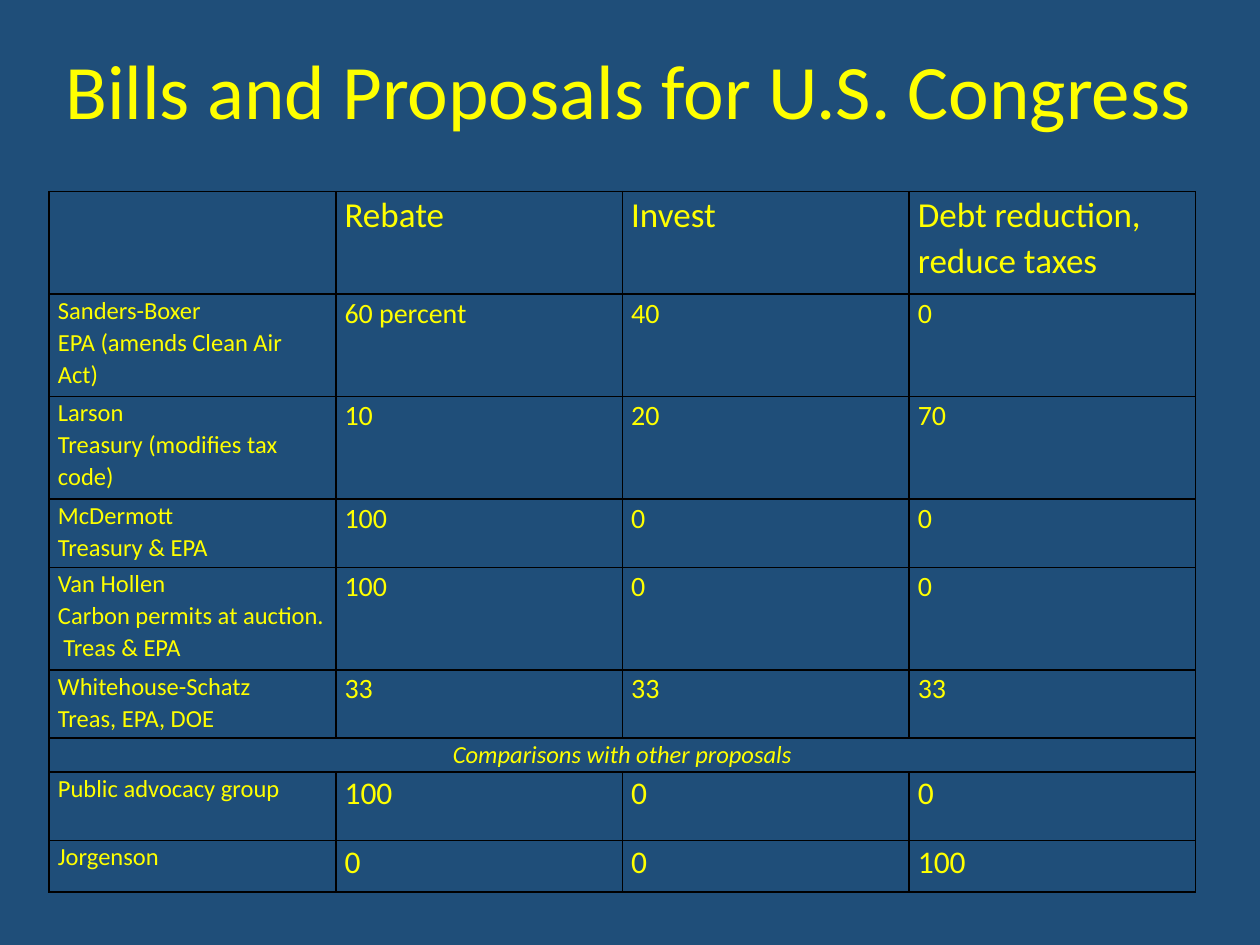
from lxml import etree
from pptx import Presentation
from pptx.dml.color import RGBColor
from pptx.enum.text import MSO_ANCHOR, PP_ALIGN
from pptx.oxml.ns import qn
from pptx.util import Inches, Pt

CENTER, LEFT = PP_ALIGN.CENTER, PP_ALIGN.LEFT
MIDDLE, TOP = MSO_ANCHOR.MIDDLE, MSO_ANCHOR.TOP

# Content: each row is (height in text lines, value size, cells)
TITLE = "Bills and Proposals for U.S. Congress"
COMPARISON = "Comparisons with other proposals"
ROWS = [
    (3, 20, ["", "Rebate", "Invest", "Debt reduction,\nreduce taxes"]),
    (3, 16, ["Sanders-Boxer\nEPA (amends Clean Air Act)", "60 percent", "40", "0"]),
    (3, 16, ["Larson\nTreasury (modifies tax code)", "10", "20", "70"]),
    (2, 16, ["McDermott\nTreasury & EPA", "100", "0", "0"]),
    (3, 16, ["Van Hollen\nCarbon permits at auction.  Treas & EPA", "100", "0", "0"]),
    (2, 16, ["Whitehouse-Schatz\nTreas, EPA, DOE", "33", "33", "33"]),
    (1, 14, [COMPARISON]),
    (2, 18, ["Public advocacy group", "100", "0", "0"]),
    (1.5, 18, ["Jorgenson", "0", "0", "100"]),
]

# Format
COLORS = {"background": "1F4E79", "text": "FFFF00", "border": "000000"}
FONT = "Calibri"
LABEL_SIZE, TITLE_SIZE = 14, 44
WIDTH, HEIGHT = Inches(10), Inches(7.5)
TABLE_LEFT, TABLE_TOP = Inches(0.39), Inches(1.52)
TABLE_WIDTH, TABLE_HEIGHT = Inches(9.1), Inches(5.56)
CELL_FORMAT = {"margin_left": Inches(0.07), "margin_right": Inches(0.07),
               "margin_top": 0, "margin_bottom": 0, "vertical_anchor": TOP}


def set_attributes(target, values):
    for name, value in values.items():
        setattr(target, name, value)


def write(frame, text, size, align, spacing, italic=False):
    frame.text = text
    for paragraph in frame.paragraphs:
        set_attributes(paragraph, {"alignment": align, "line_spacing": spacing})
        for run in paragraph.runs:
            set_attributes(run.font, {"name": FONT, "size": Pt(size),
                                      "bold": False, "italic": italic})
            run.font.color.rgb = RGBColor.from_string(COLORS["text"])


def add_borders(cell):
    properties = cell._tc.get_or_add_tcPr()
    for position, side in enumerate(("a:lnL", "a:lnR", "a:lnT", "a:lnB")):
        line = etree.Element(qn(side), w=str(Pt(1)))
        fill = etree.SubElement(line, qn("a:solidFill"))
        etree.SubElement(fill, qn("a:srgbClr"), val=COLORS["border"])
        properties.insert(position, line)


def main():
    prs = Presentation()
    prs.slide_width, prs.slide_height = WIDTH, HEIGHT
    slide = prs.slides.add_slide(prs.slide_layouts[5])
    background = slide.background.fill
    background.solid()
    background.fore_color.rgb = RGBColor.from_string(COLORS["background"])

    # Title
    title = slide.shapes.title
    set_attributes(title, {"left": Inches(-0.01), "top": Inches(0.21),
                           "width": WIDTH, "height": Inches(1.08)})
    title.text_frame.vertical_anchor = MIDDLE
    write(title.text_frame, TITLE, TITLE_SIZE, CENTER, 0.9)

    # Table grid: equal columns, row heights in shares of the text lines
    column_count = len(ROWS[0][2])
    table = slide.shapes.add_table(len(ROWS), column_count, TABLE_LEFT, TABLE_TOP,
                                   TABLE_WIDTH, TABLE_HEIGHT).table
    set_attributes(table, {"first_row": False, "horz_banding": False})
    line_height = TABLE_HEIGHT / sum(lines for lines, _, _ in ROWS)

    # Cells
    for r, (lines, value_size, texts) in enumerate(ROWS):
        table.rows[r].height = int(lines * line_height)
        is_divider = len(texts) == 1
        if is_divider:
            table.cell(r, 0).merge(table.cell(r, column_count - 1))
        for c in range(column_count):
            cell = table.cell(r, c)
            set_attributes(cell, CELL_FORMAT)
            cell.fill.background()
            add_borders(cell)
            if c < len(texts) and texts[c]:
                write(cell.text_frame, texts[c], value_size if c else LABEL_SIZE,
                      CENTER if is_divider else LEFT, 1.07, is_divider)

    prs.save("out.pptx")


if __name__ == "__main__":
    main()
